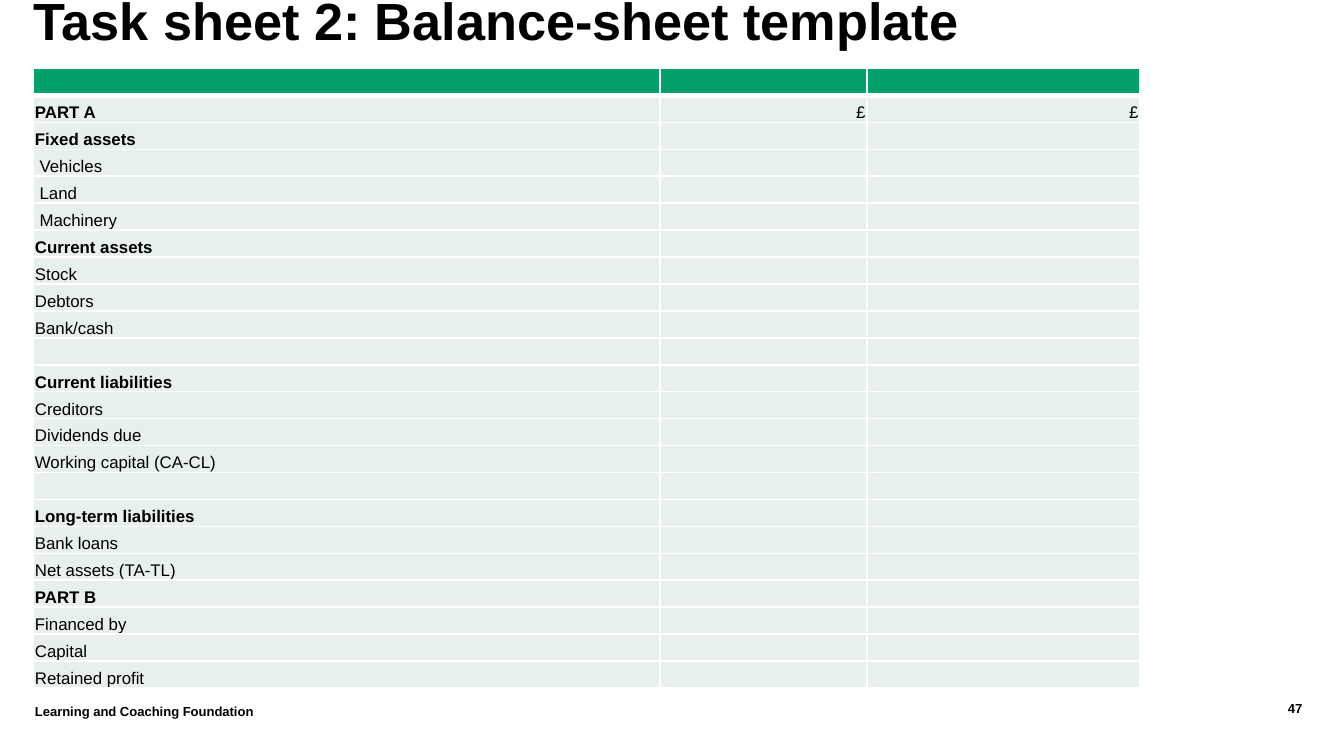
import lxml.etree
import pptx
import pptx.dml.color
import pptx.enum.text
import pptx.oxml.ns
import pptx.util

Inches = pptx.util.Inches
Pt = pptx.util.Pt
ALIGN = pptx.enum.text.PP_ALIGN

FONT = "Arial"
BLACK = "000000"
WHITE = "FFFFFF"
GREEN = "00A068"
PALE_GREEN = "E7F0EB"

SLIDE_WIDTH = 10
SLIDE_HEIGHT = SLIDE_WIDTH * 9 / 16
COLUMN_WIDTHS = (4.66, 1.54, 2.03)
HEADINGS = {"PART A", "Fixed assets", "Current assets", "Current liabilities",
            "Long-term liabilities", "PART B"}
ROWS = [
    (),
    ("PART A", "£", "£"),
    ("Fixed assets",), (" Vehicles",), (" Land",), (" Machinery",),
    ("Current assets",), ("Stock",), ("Debtors",), ("Bank/cash",),
    (),
    ("Current liabilities",), ("Creditors",), ("Dividends due",),
    ("Working capital (CA-CL)",),
    (),
    ("Long-term liabilities",), ("Bank loans",), ("Net assets (TA-TL)",),
    ("PART B",), ("Financed by",), ("Capital",), ("Retained profit",),
]


def color(hex_value):
    return pptx.dml.color.RGBColor.from_string(hex_value)


def write_text(text_frame, text, size, bold=False, align=ALIGN.LEFT, line_spacing=None):
    paragraph = text_frame.paragraphs[0]
    paragraph.alignment = align
    if line_spacing:
        paragraph.line_spacing = line_spacing
    if not text:
        # The end mark's size keeps an empty row from growing.
        paragraph._p.get_or_add_endParaRPr().set("sz", str(size * 100))
        return
    run = paragraph.add_run()
    run.text = text
    run.font.name = FONT
    run.font.size = Pt(size)
    run.font.bold = bold
    run.font.color.rgb = color(BLACK)


def add_text(slide, box, text, **text_format):
    text_frame = slide.shapes.add_textbox(*map(Inches, box)).text_frame
    text_frame.word_wrap = True
    text_frame.margin_left = text_frame.margin_right = 0
    text_frame.margin_top = text_frame.margin_bottom = 0
    write_text(text_frame, text, **text_format)


def set_borders(cell, top=1, bottom=1):
    """Draw white borders; top and bottom are widths in points."""
    properties = cell._tc.get_or_add_tcPr()
    for side, width in (("L", 1), ("R", 1), ("T", top), ("B", bottom)):
        line = lxml.etree.SubElement(
            properties, pptx.oxml.ns.qn(f"a:ln{side}"), w=str(Pt(width)))
        fill = lxml.etree.SubElement(line, pptx.oxml.ns.qn("a:solidFill"))
        lxml.etree.SubElement(fill, pptx.oxml.ns.qn("a:srgbClr"), val=WHITE)


def format_cell(cell, row_index, column_index, text):
    set_borders(cell, top=3 if row_index == 1 else 1, bottom=3 if row_index == 0 else 1)
    cell.fill.solid()
    cell.fill.fore_color.rgb = color(PALE_GREEN if row_index else GREEN)
    cell.vertical_anchor = pptx.enum.text.MSO_ANCHOR.BOTTOM
    cell.margin_left = cell.margin_right = cell.margin_top = Inches(0.01)
    cell.margin_bottom = 0
    write_text(cell.text_frame, text, size=9, bold=text in HEADINGS,
               align=ALIGN.RIGHT if column_index else ALIGN.LEFT)


def add_balance_sheet(slide, box):
    frame = slide.shapes.add_table(len(ROWS), len(COLUMN_WIDTHS), *map(Inches, box))
    table = frame.table
    for column, width in zip(table.columns, COLUMN_WIDTHS):
        column.width = Inches(width)
    for row_index, values in enumerate(ROWS):
        table.rows[row_index].height = Inches(box[3] / len(ROWS))
        for column_index in range(len(COLUMN_WIDTHS)):
            text = values[column_index] if column_index < len(values) else ""
            format_cell(table.cell(row_index, column_index), row_index, column_index, text)


def add_footer(slide, box):
    left, top, width, height = box
    number_width = 0.99
    add_text(slide, (left, top, width - number_width, height),
             "Learning and Coaching Foundation", size=7, bold=True, line_spacing=1.2)
    add_text(slide, (left + width - number_width, top, number_width, height),
             "47", size=7, bold=True, align=ALIGN.RIGHT)


def main():
    presentation = pptx.Presentation()
    presentation.slide_width = Inches(SLIDE_WIDTH)
    presentation.slide_height = Inches(SLIDE_HEIGHT)
    slide = presentation.slides.add_slide(presentation.slide_layouts[6])
    add_text(slide, (0.25, 0.1, 9.23, 0.76), "Task sheet 2: Balance-sheet template",
             size=28, bold=True, line_spacing=Pt(20))
    add_balance_sheet(slide, (0.25, 0.51, 8.23, 4.61))
    add_footer(slide, (0.26, 5.21, 9.43, 0.3))
    presentation.save("out.pptx")


if __name__ == "__main__":
    main()
